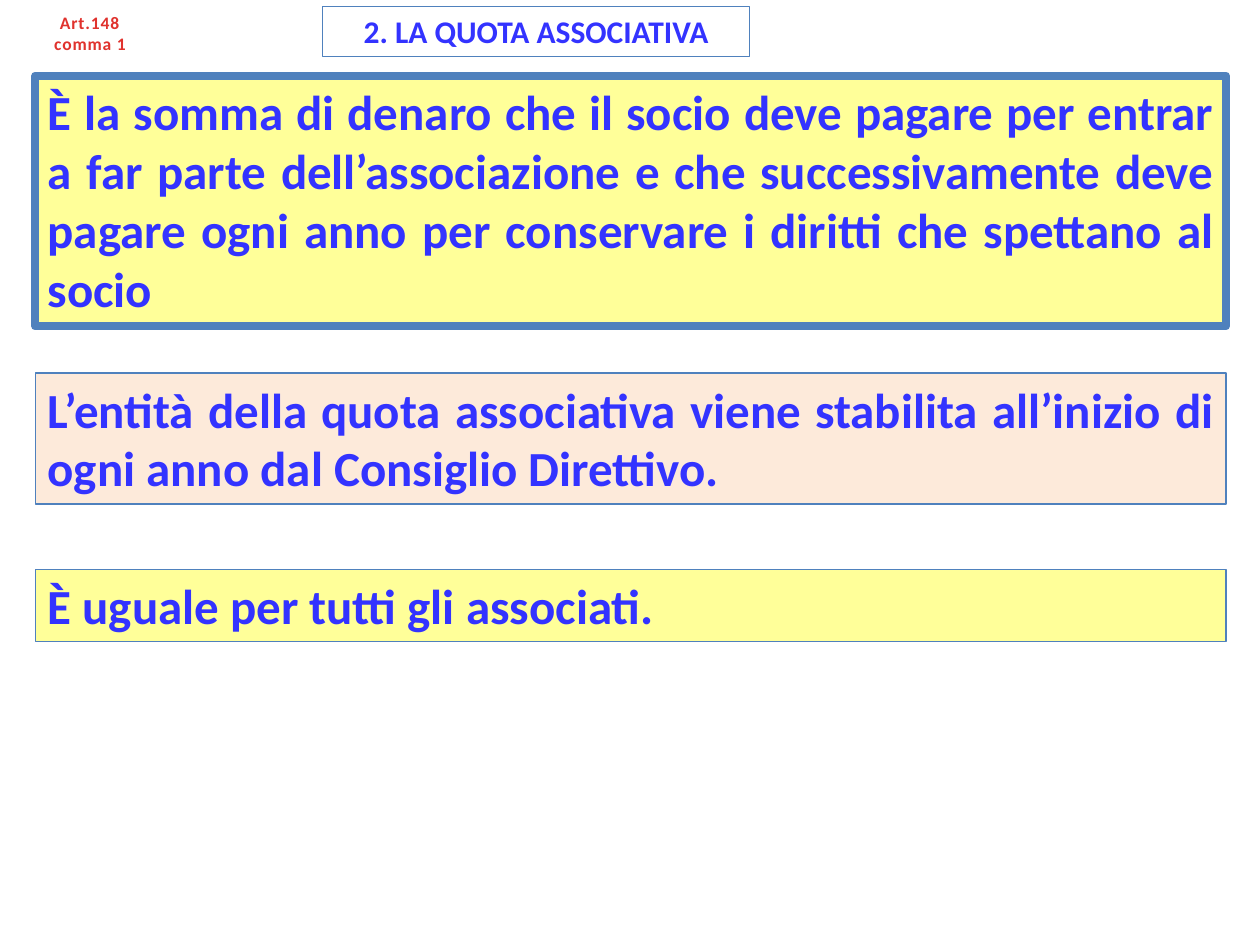
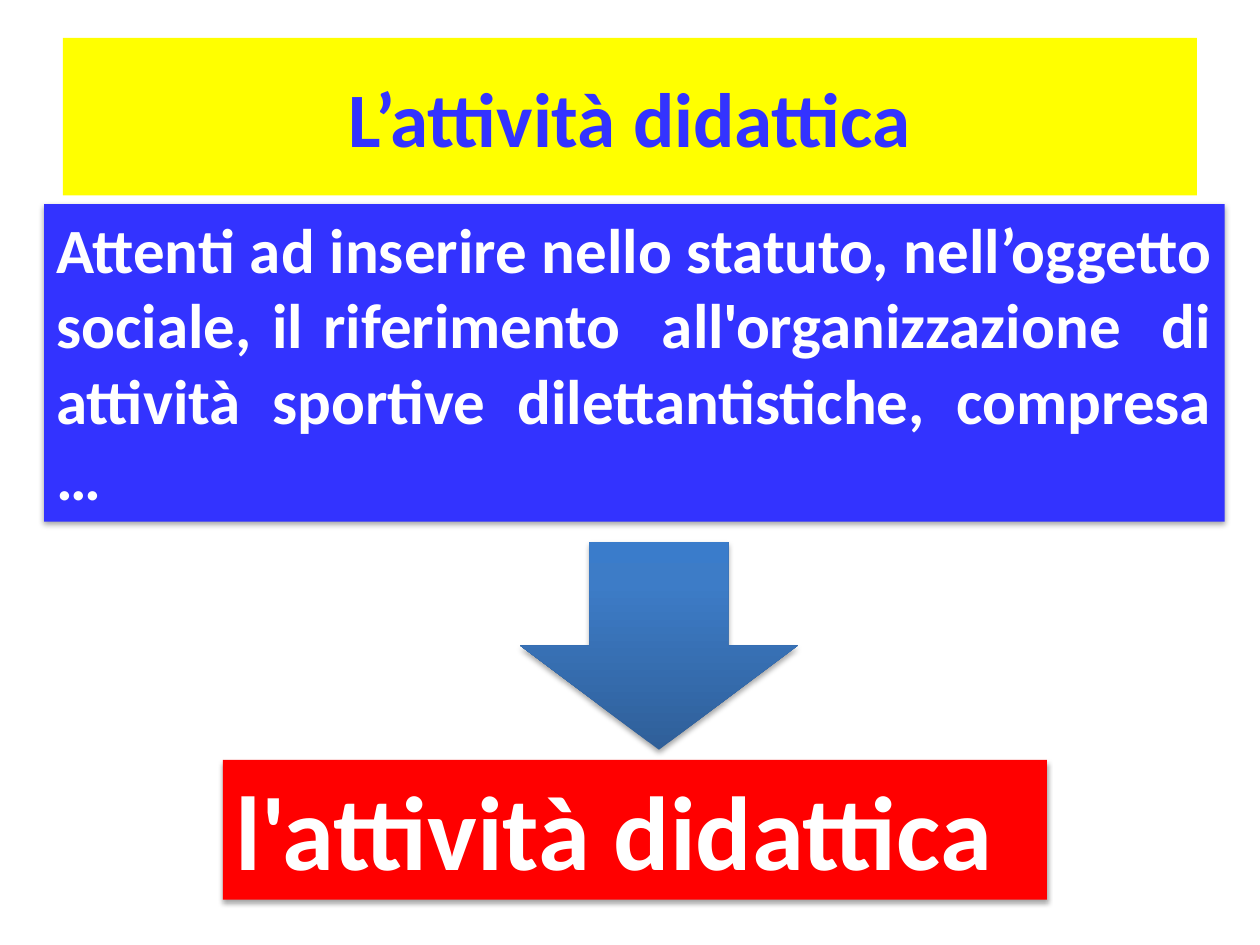
"""Builds two slides on the membership fee and the teaching activity of an association."""
import pptx
import pptx.util
import pptx.dml.color
import pptx.enum.shapes
import pptx.enum.text
import pptx.oxml.ns
from lxml import etree

W, H = 10, 7.5
FONT = "Calibri"
BLUE, EDGE, WHITE = "3333FF", "4F81BD", "FFFFFF"
YELLOW, PEACH, BRIGHT, RED = "FFFF99", "FDEADA", "FFFF00", "FF0000"
ARROW_STOPS = [(0, "2F5F99"), (80, "3D7CC7"), (100, "3A7CCB")]
SHADOW = {"blurRad": 3.15, "dist": 1.8}
LEFT, FULL = 0.28, 9.45

FEE_HEADER = [
    ("Art.148 comma 1", (LEFT, 0.05, 0.87, 0.44),
     dict(size=10, color="E0322D", align="CENTER", spacing=50), {}),
    ("2. LA QUOTA ASSOCIATIVA", (2.56, 0.05, 3.39, 0.4),
     dict(size=18, color=BLUE, align="CENTER"), dict(line=0.75)),
]
FEE_RULES = [
    ("È la somma di denaro che il socio deve pagare per entrar a far parte "
     "dell’associazione e che successivamente deve pagare ogni anno per "
     "conservare i diritti che spettano al socio", 0.6, 1.99, YELLOW, 4.5),
    ("L’entità della quota associativa viene stabilita all’inizio di ogni anno "
     "dal Consiglio Direttivo.", 2.96, 1.04, PEACH, 0.75),
    ("È uguale per tutti gli associati.", 4.52, 0.57, YELLOW, 0.75),
]
TEACHING = [
    ("Attenti ad inserire nello statuto, nell’oggetto sociale, il riferimento  "
     "all'organizzazione  di attività sportive dilettantistiche, compresa …",
     (0.35, 1.62, 9.37, 2.52), dict(size=36, color=WHITE, align="JUSTIFY"),
     dict(fill=BLUE, shadow=True)),
    ("l'attività didattica", (1.77, 6.03, 6.54, 1.11),
     dict(size=60, color=WHITE, align="LEFT"), dict(fill=RED, shadow=True)),
    ("L’attività didattica", (W * 0.05, H * 0.04, W * 0.9, 1.25),
     dict(size=44, color=BLUE, align="CENTER", anchor="MIDDLE"), dict(fill=BRIGHT)),
]
ARROW = (4.13, 4.3, 2.2, 1.65)


def rgb(value):
    return pptx.dml.color.RGBColor.from_string(value)


def child(parent, tag, **attrs):
    return etree.SubElement(parent, pptx.oxml.ns.qn(tag),
                            {k: str(v) for k, v in attrs.items()})


def color_node(parent, value):
    return child(parent, "a:srgbClr", val=value)


def add_box(slide, at, kind="RECTANGLE", fill=None, line=None, shadow=False):
    sp = slide.shapes.add_shape(getattr(pptx.enum.shapes.MSO_SHAPE, kind),
                                *[pptx.util.Inches(v) for v in at])
    sp.shadow.inherit = False
    if fill:
        sp.fill.solid()
        sp.fill.fore_color.rgb = rgb(fill)
    else:
        sp.fill.background()
    if line:
        sp.line.color.rgb = rgb(EDGE)
        sp.line.width = pptx.util.Pt(line)
        child(sp.line._get_or_add_ln(), "a:round")
    else:
        sp.line.fill.background()
    if shadow:
        effects = sp._element.spPr.find(pptx.oxml.ns.qn("a:effectLst"))
        sizes = {k: int(pptx.util.Pt(v)) for k, v in SHADOW.items()}
        outer = child(effects, "a:outerShdw", dir=90 * 60000, rotWithShape=0, **sizes)
        child(color_node(outer, "000000"), "a:alpha", val=35000)
    return sp


def write(sp, text, size, color, align, anchor="TOP", spacing=None):
    tf = sp.text_frame
    tf.word_wrap = True
    tf.vertical_anchor = getattr(pptx.enum.text.MSO_ANCHOR, anchor)
    if anchor == "TOP":
        tf.auto_size = pptx.enum.text.MSO_AUTO_SIZE.SHAPE_TO_FIT_TEXT
    p = tf.paragraphs[0]
    p.alignment = getattr(pptx.enum.text.PP_ALIGN, align)
    r = p.add_run()
    r.text = text
    r.font.name, r.font.size, r.font.bold = FONT, pptx.util.Pt(size), True
    r.font.color.rgb = rgb(color)
    if spacing:
        r._r.get_or_add_rPr().set("spc", str(spacing))


def shade(sp, stops):
    sp.fill.gradient()
    sp.fill.gradient_angle = 90
    stop_list = next(sp._element.spPr.iter(pptx.oxml.ns.qn("a:gsLst")))
    for old in list(stop_list):
        stop_list.remove(old)
    for pos, value in stops:
        color_node(child(stop_list, "a:gs", pos=pos * 1000), value)


def add_texts(slide, items):
    for text, at, style, look in items:
        write(add_box(slide, at, **look), text, **style)


def main():
    prs = pptx.Presentation()
    prs.slide_width, prs.slide_height = pptx.util.Inches(W), pptx.util.Inches(H)
    fee, teaching = [prs.slides.add_slide(prs.slide_layouts[6]) for _ in range(2)]

    add_texts(fee, FEE_HEADER)
    add_texts(fee, [(text, (LEFT, top, FULL, height),
                     dict(size=28, color=BLUE, align="JUSTIFY"),
                     dict(fill=fill, line=line))
                    for text, top, height, fill, line in FEE_RULES])

    add_texts(teaching, TEACHING)
    shade(add_box(teaching, ARROW, kind="DOWN_ARROW", shadow=True), ARROW_STOPS)
    prs.save("out.pptx")


if __name__ == "__main__":
    main()
